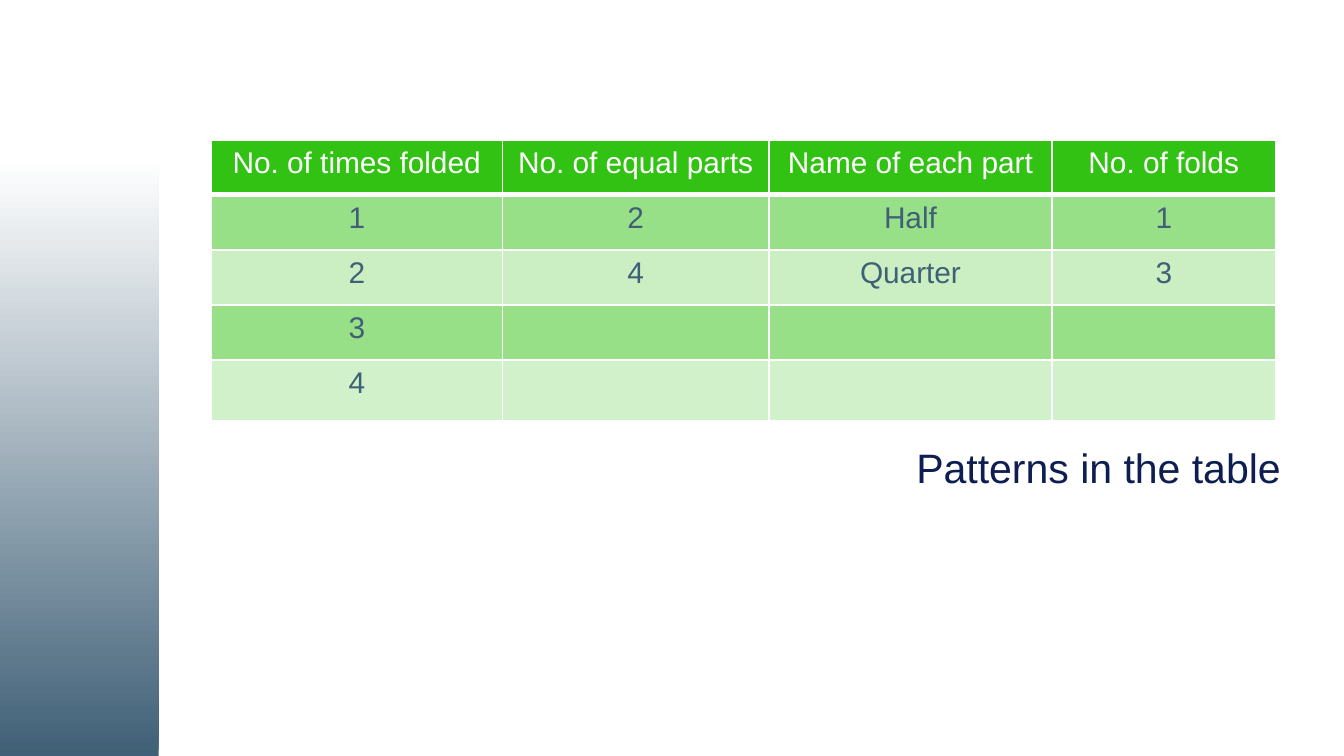
"""Build the paper-folding patterns slide with its table and caption."""
from dataclasses import dataclass

from lxml import etree
from pptx import Presentation
from pptx.dml.color import RGBColor
from pptx.enum import shapes, text
from pptx.oxml import ns
from pptx.util import Inches, Pt

WHITE = RGBColor(0xFF, 0xFF, 0xFF)
SLATE = RGBColor(0x40, 0x60, 0x77)
GREEN = RGBColor(0x32, 0xC2, 0x13)
PALE_GREEN = RGBColor(0xD1, 0xF1, 0xCB)
NAVY = RGBColor(0x0F, 0x1E, 0x50)
FONT = "Arial"
SLIDE_WIDTH = Inches(10)
SLIDE_HEIGHT = SLIDE_WIDTH * 9 // 16
COLUMN_WIDTHS = (2.17, 1.98, 2.11, 1.66)


@dataclass(frozen=True)
class TableRow:
    values: tuple[str, ...]
    fill: RGBColor = GREEN
    opacity: int = 100
    ink: RGBColor = SLATE
    height: float = 0.41
    top_border: int = 1
    bottom_border: int = 1


ROWS = (
    TableRow(("No. of times folded", "No. of equal parts", "Name of each part", "No. of folds"),
             ink=WHITE, bottom_border=3),
    TableRow(("1", "2", "Half", "1"), opacity=50, top_border=3),
    TableRow(("2", "4", "Quarter", "3"), opacity=25),
    TableRow(("3", "", "", ""), opacity=50),
    TableRow(("4", "", "", ""), fill=PALE_GREEN, height=0.45),
)


def set_font(para, size: int, color: RGBColor) -> None:
    para.font.name = FONT
    para.font.size = Pt(size)
    para.font.bold = False
    para.font.color.rgb = color


def set_borders(properties, row: TableRow) -> None:
    widths = {"lnL": 1, "lnR": 1, "lnT": row.top_border, "lnB": row.bottom_border}
    for index, (side, width) in enumerate(widths.items()):
        line = etree.Element(ns.qn(f"a:{side}"), w=str(Pt(width)))
        fill = etree.SubElement(line, ns.qn("a:solidFill"))
        etree.SubElement(fill, ns.qn("a:srgbClr"), val=str(WHITE))
        properties.insert(index, line)


def draw_cell(cell, value: str, row: TableRow) -> None:
    cell.fill.solid()
    cell.fill.fore_color.rgb = row.fill
    properties = cell._tc.get_or_add_tcPr()
    if row.opacity < 100:
        color = properties.find(f".//{ns.qn('a:srgbClr')}")
        etree.SubElement(color, ns.qn("a:alpha"), val=str(row.opacity * 1000))
    set_borders(properties, row)
    cell.text = value
    para = cell.text_frame.paragraphs[0]
    para.alignment = text.PP_ALIGN.CENTER
    set_font(para, 16, row.ink)


def draw_table(page) -> None:
    frame = page.shapes.add_table(
        len(ROWS), len(COLUMN_WIDTHS), Inches(1.57), Inches(1.04),
        Inches(sum(COLUMN_WIDTHS)), Inches(sum(row.height for row in ROWS)))
    table = frame.table
    table.horz_banding = False
    for column, width in zip(table.columns, COLUMN_WIDTHS):
        column.width = Inches(width)
    for table_row, row in zip(table.rows, ROWS):
        table_row.height = Inches(row.height)
        for cell, value in zip(table_row.cells, row.values):
            draw_cell(cell, value, row)


def draw_side_band(page) -> None:
    band = page.shapes.add_shape(
        shapes.MSO_SHAPE.RECTANGLE, 0, 0, Inches(1.18), SLIDE_HEIGHT)
    band.shadow.inherit = False
    band.line.fill.background()
    band.fill.gradient()
    band.fill.gradient_angle = 90
    for stop, position, color in zip(band.fill.gradient_stops, (0, 0.79), (SLATE, WHITE)):
        stop.position = position
        stop.color.rgb = color


def draw_caption(page) -> None:
    box = page.shapes.add_textbox(Inches(6.72), Inches(3.24), Inches(3.3), Inches(0.47))
    box.text_frame.word_wrap = True
    box.text_frame.auto_size = text.MSO_AUTO_SIZE.SHAPE_TO_FIT_TEXT
    para = box.text_frame.paragraphs[0]
    para.text = "Patterns in the table"
    set_font(para, 22, NAVY)


def main() -> None:
    deck = Presentation()
    deck.slide_width, deck.slide_height = SLIDE_WIDTH, SLIDE_HEIGHT
    page = deck.slides.add_slide(deck.slide_layouts[6])
    draw_side_band(page)
    draw_table(page)
    draw_caption(page)
    deck.save("out.pptx")


if __name__ == "__main__":
    main()
